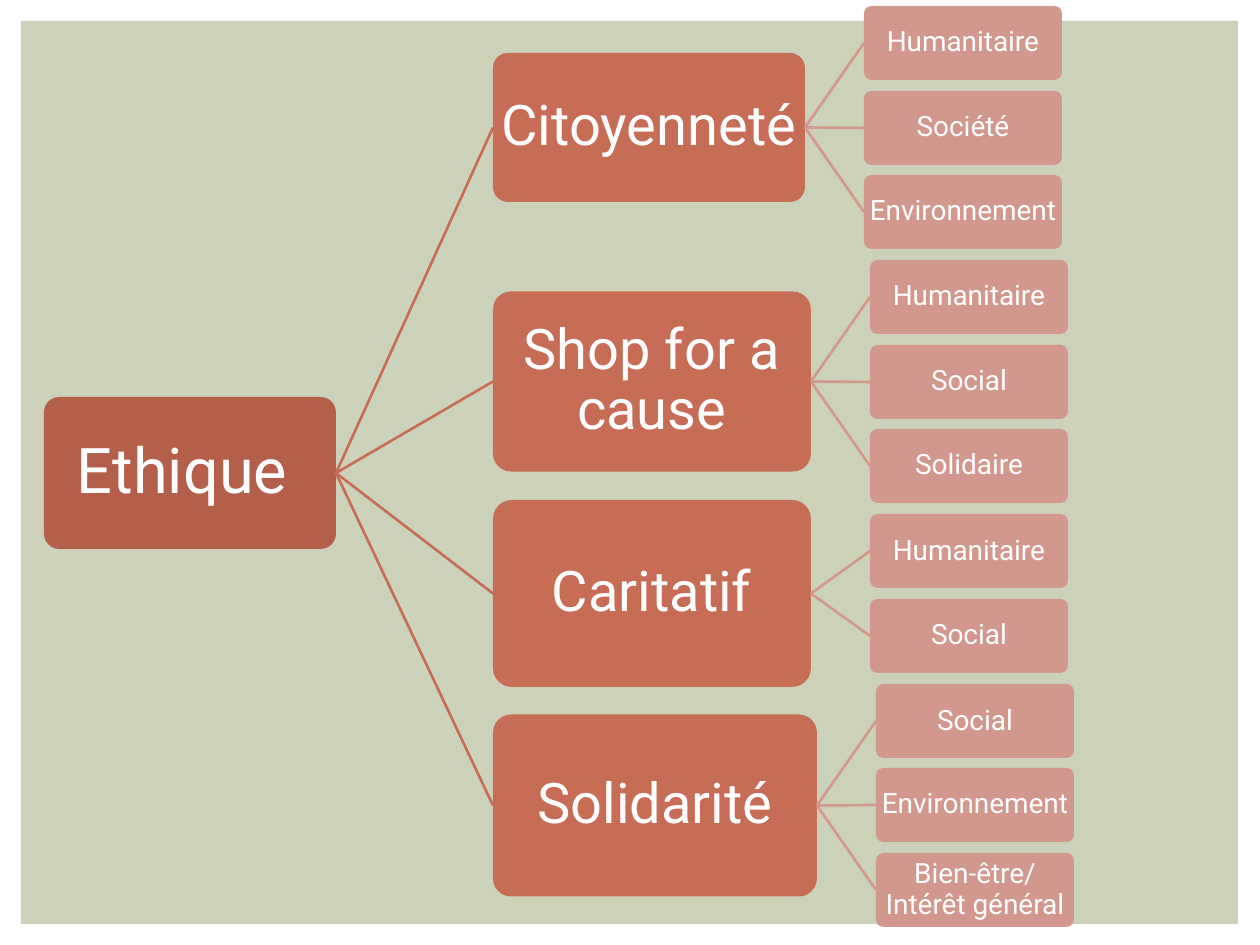
from lxml import etree
from pptx import Presentation, util as u
from pptx.dml import color
from pptx.enum import shapes, text
from pptx.oxml import ns

EMU_PER_PX = 914400 / 126

BACKDROP, ROOT, BRANCH, LEAF = "CCD1B9", "B45F4A", "C76C55", "D3988D"

ROOT_X, ROOT_Y, ROOT_W, ROOT_H = 44, 473, 292, 152
BRANCH_X = 493
LEAF_W, LEAF_H, LEAF_GAP = 198, 74, 59
FIRST_LEAF_Y, LEAF_STEP = 43, 84.7

# name, width, height, leaves
BRANCHES = [
    ("Citoyenneté", 312, 149, ["Humanitaire", "Société", "Environnement"]),
    ("Shop for a cause", 318, 180, ["Humanitaire", "Social", "Solidaire"]),
    ("Caritatif", 318, 187, ["Humanitaire", "Social"]),
    ("Solidarité", 324, 182,
     ["Social", "Environnement", "Bien-être/Intérêt général"]),
]


def px(n):
    return u.Emu(round(n * EMU_PER_PX))


def rgb(value):
    return color.RGBColor.from_string(value)


def write(sp, words, size=16, inset=1, font="Roboto", ink="FFFFFF"):
    tf = sp.text_frame
    tf.word_wrap = True
    tf.vertical_anchor = text.MSO_ANCHOR.MIDDLE
    tf.margin_left = tf.margin_right = px(inset)
    tf.margin_top = tf.margin_bottom = px(inset)
    p = tf.paragraphs[0]
    p.alignment = text.PP_ALIGN.CENTER
    p.line_spacing = 0.9
    r = p.add_run()
    r.text = words
    r.font.name = font
    r.font.size = u.Pt(size)
    r.font.color.rgb = rgb(ink)


class TreeSlide:
    line_width = 1.5
    corner = 0.1

    def __init__(self, prs):
        self.s = prs.slides.add_slide(prs.slide_layouts[6])

    def shape(self, kind, x, y, w, h, fill):
        sp = self.s.shapes.add_shape(kind, px(x), px(y), px(w), px(h))
        sp.shadow.inherit = False
        sp.fill.solid()
        sp.fill.fore_color.rgb = rgb(fill)
        sp.line.fill.background()
        return sp

    def panel(self, x, y, w, h, fill):
        return self.shape(shapes.MSO_SHAPE.RECTANGLE, x, y, w, h, fill)

    def node(self, x, mid_y, w, h, fill, words, **style):
        """Rounded box centred vertically on mid_y."""
        sp = self.shape(shapes.MSO_SHAPE.ROUNDED_RECTANGLE,
                        x, mid_y - h / 2, w, h, fill)
        sp.adjustments[0] = self.corner
        write(sp, words, **style)

    def link(self, x1, y1, x2, y2, ink):
        cx = self.s.shapes.add_connector(
            shapes.MSO_CONNECTOR.STRAIGHT, px(x1), px(y1), px(x2), px(y2))
        cx.line.width = u.Pt(self.line_width)
        cx.line.color.rgb = rgb(ink)
        etree.SubElement(cx._element.spPr, ns.qn("a:effectLst"))


def main():
    prs = Presentation()
    prs.slide_width, prs.slide_height = px(1260), px(945)
    tree = TreeSlide(prs)
    tree.panel(21, 21, 1217, 903, BACKDROP)
    tree.node(ROOT_X, ROOT_Y, ROOT_W, ROOT_H, ROOT, "Ethique ",
              size=36, inset=4)

    row = 0
    for name, width, height, leaves in BRANCHES:
        leaf_ys = [round(FIRST_LEAF_Y + LEAF_STEP * (row + i))
                   for i in range(len(leaves))]
        row += len(leaves)
        mid_y = (leaf_ys[0] + leaf_ys[-1]) / 2
        right = BRANCH_X + width
        tree.link(ROOT_X + ROOT_W, ROOT_Y, BRANCH_X, mid_y, BRANCH)
        tree.node(BRANCH_X, mid_y, width, height, BRANCH, name,
                  size=32, inset=2)
        for leaf, leaf_y in zip(leaves, leaf_ys):
            tree.link(right, mid_y, right + LEAF_GAP, leaf_y, LEAF)
            tree.node(right + LEAF_GAP, leaf_y, LEAF_W, LEAF_H, LEAF, leaf)

    prs.save("out.pptx")


if __name__ == "__main__":
    main()
